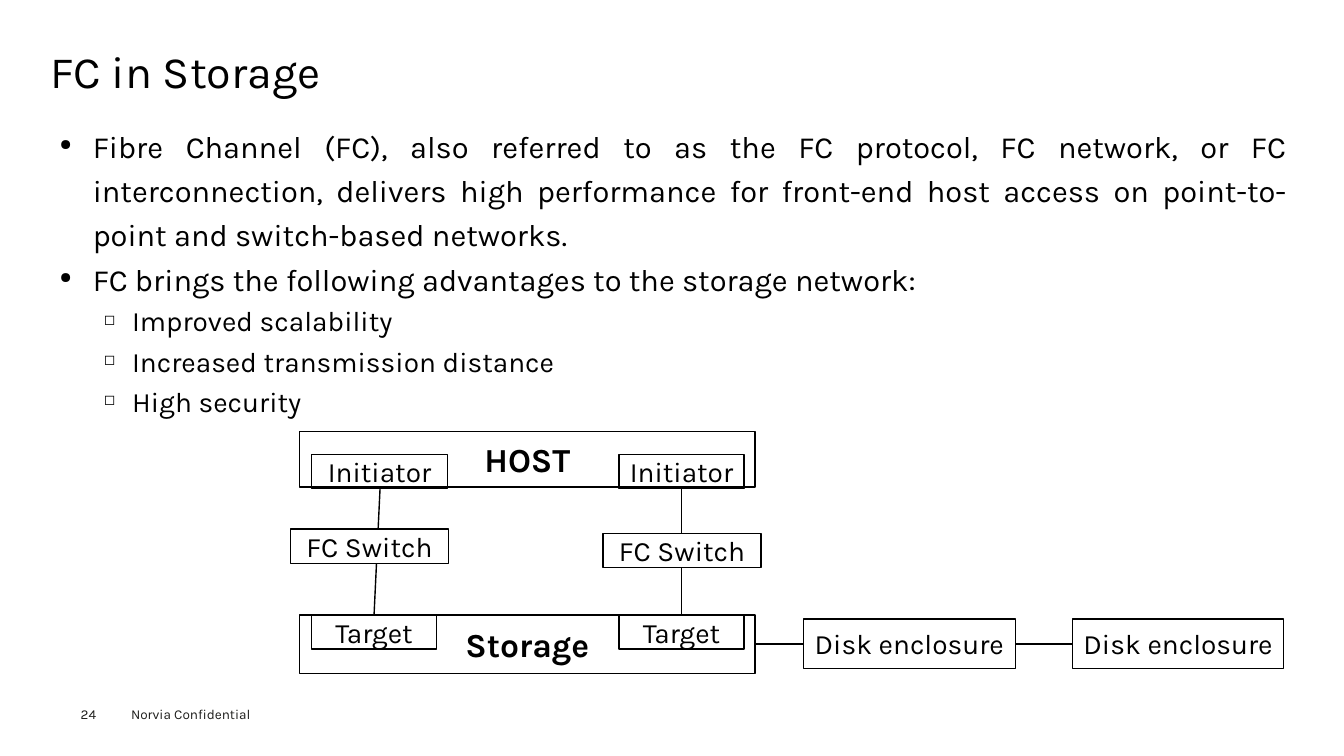
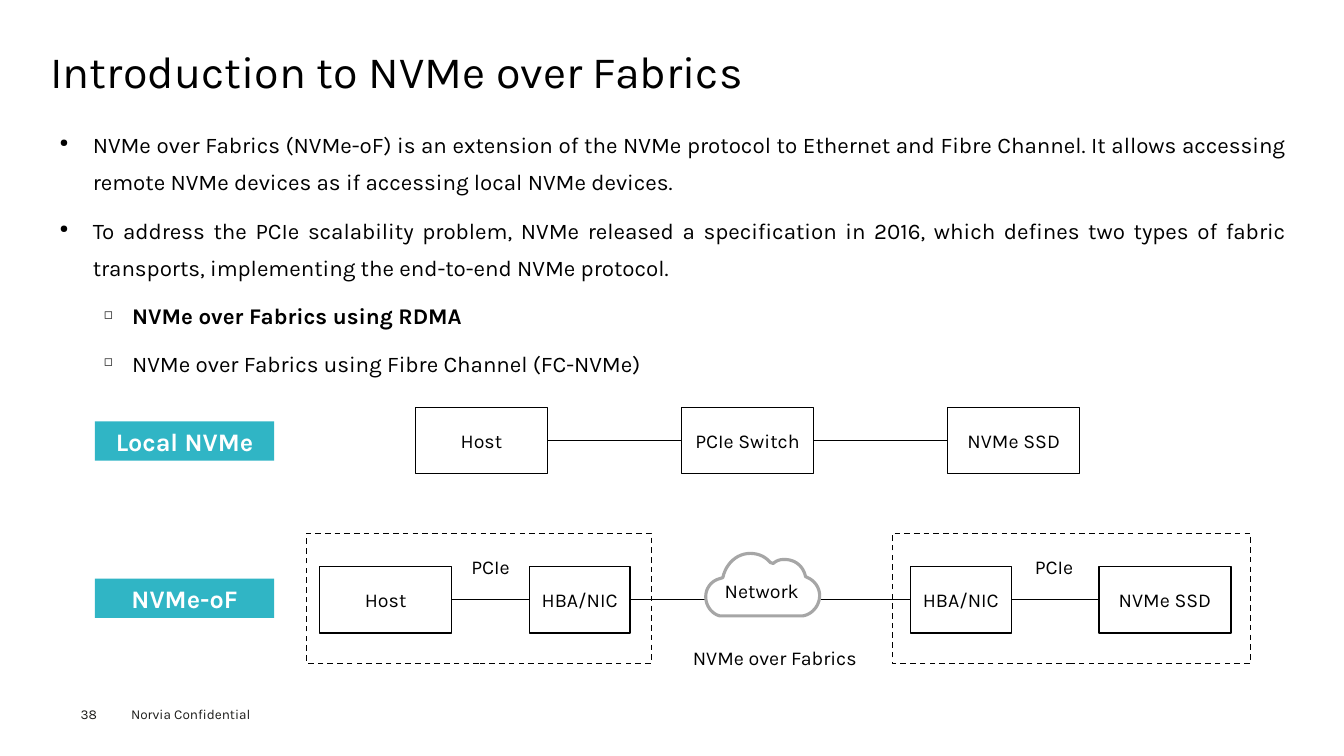
from lxml.etree import SubElement
from pptx import Presentation
from pptx.dml.color import RGBColor
from pptx.enum.dml import MSO_LINE
from pptx.enum.shapes import MSO_CONNECTOR, MSO_SHAPE
from pptx.enum.text import MSO_ANCHOR as ANCHOR, PP_ALIGN as ALIGN
from pptx.oxml.ns import qn
from pptx.util import Inches, Pt

THEME = {
    "font": "Karla",
    "black": RGBColor(0x00, 0x00, 0x00),
    "white": RGBColor(0xFF, 0xFF, 0xFF),
    "teal": RGBColor(0x30, 0xB5, 0xC5),
    "gray": RGBColor(0xA6, 0xA6, 0xA6),
    "ink": RGBColor(0x1D, 0x1D, 0x1B),
    "line": Pt(1),
    "cloud_line": Pt(2.25),
    "styles": {
        "title": {"size": 32, "align": ALIGN.LEFT, "anchor": ANCHOR.TOP, "spacing": 0.9},
        "footer": {"size": 9.7, "align": ALIGN.LEFT, "anchor": ANCHOR.TOP, "color": "ink"},
        "label": {"size": 14},
        "node": {"size": 14, "fill": "white", "line": "black"},
        "zone": {"size": 14, "line": "black", "dash": MSO_LINE.DASH},
        "tag": {"size": 18, "bold": True, "color": "white", "fill": "teal"},
        "device": {"size": 24, "bold": True, "line": "black"},
        "port": {"size": 20, "line": "black"},
        "switch": {"size": 20, "fill": "white", "line": "black"},
    },
    "levels": [
        {"align": ALIGN.JUSTIFY, "bullet": "●", "indent": (0.33, -0.33)},
        {"align": ALIGN.LEFT, "bullet": "◻", "indent": (0.72, -0.28)},
    ],
}


def write(paragraph, text, style):
    paragraph.alignment = style.get("align", ALIGN.CENTER)
    paragraph.line_spacing = style.get("spacing", 1.0)
    run = paragraph.add_run()
    run.text = text
    font_format = {
        "name": THEME["font"],
        "size": Pt(style["size"]),
        "bold": style.get("bold", False),
    }
    for name, value in font_format.items():
        setattr(run.font, name, value)
    run.font.color.rgb = THEME[style.get("color", "black")]


def add_box(slide, style_name, text, *position):
    style = THEME["styles"][style_name]
    place = [Inches(value) for value in position]
    if "fill" in style or "line" in style:
        shape = slide.shapes.add_shape(MSO_SHAPE.RECTANGLE, *place)
        shape.shadow.inherit = False
        if "fill" in style:
            shape.fill.solid()
            shape.fill.fore_color.rgb = THEME[style["fill"]]
        else:
            shape.fill.background()
        if "line" in style:
            shape.line.color.rgb = THEME[style["line"]]
            shape.line.width = THEME["line"]
            shape.line.dash_style = style.get("dash")
        else:
            shape.line.fill.background()
    else:
        shape = slide.shapes.add_textbox(*place)
    frame_format = {
        "word_wrap": True,
        "vertical_anchor": style.get("anchor", ANCHOR.MIDDLE),
        "margin_left": 0,
        "margin_right": 0,
        "margin_top": 0,
        "margin_bottom": 0,
    }
    for name, value in frame_format.items():
        setattr(shape.text_frame, name, value)
    if text:
        write(shape.text_frame.paragraphs[0], text, style)


node_width, node_height = 1.31, 0.66
local_top, fabric_top = 4.04, 5.62
local_nodes = [
    ("node", text, 4.12 + 2.64 * index, local_top, node_width, node_height)
    for index, text in enumerate(["Host", "PCIe Switch", "NVMe SSD"])
]
fabric_nodes = [
    ("node", text, left, fabric_top, width, node_height)
    for text, left, width in [
        ("Host", 3.17, node_width),
        ("HBA/NIC", 5.25, 1),
        ("HBA/NIC", 9.03, 1),
        ("NVMe SSD", 10.9, node_width),
    ]
]

PAGES = [
    {
        "number": "24",
        "title": "FC in Storage",
        "body_height": 3.06,
        "sizes": (22, 20),
        "spacing": 1.2,
        "space_before": (0, 0),
        "body": [
            (0, False, "Fibre Channel (FC), also referred to as the FC protocol, FC network, or FC "
                       "interconnection, delivers high performance for front-end host access on "
                       "point-to-point and switch-based networks."),
            (0, False, "FC brings the following advantages to the storage network:"),
            (1, False, "Improved scalability"),
            (1, False, "Increased transmission distance"),
            (1, False, "High security"),
        ],
        "lines": [
            (3.71, 6.1, 3.77, 4.84),
            (6.76, 6.1, 6.76, 4.84),
            (7.49, 6.39, 7.97, 6.39),
            (10.07, 6.39, 10.64, 6.39),
        ],
        "boxes": [
            ("device", "HOST", 2.97, 4.28, 4.52, 0.55),
            ("device", "Storage", 2.97, 6.1, 4.52, 0.58),
            ("port", "Initiator", 3.09, 4.51, 1.35, 0.34),
            ("port", "Initiator", 6.14, 4.51, 1.24, 0.34),
            ("port", "Target", 3.09, 6.1, 1.24, 0.34),
            ("port", "Target", 6.14, 6.1, 1.24, 0.34),
            ("port", "Disk enclosure", 7.97, 6.14, 2.1, 0.49),
            ("port", "Disk enclosure", 10.64, 6.14, 2.09, 0.49),
            ("switch", "FC Switch", 2.88, 5.25, 1.57, 0.34),
            ("switch", "FC Switch", 5.98, 5.29, 1.57, 0.34),
        ],
    },
    {
        "number": "38",
        "title": "Introduction to NVMe over Fabrics",
        "body_height": 2.66,
        "sizes": (16, 16),
        "spacing": 1.4,
        "space_before": (7.9, 7.2),
        "body": [
            (0, False, "NVMe over Fabrics (NVMe-oF) is an extension of the NVMe protocol to Ethernet and "
                       "Fibre Channel. It allows accessing remote NVMe devices as if accessing local "
                       "NVMe devices."),
            (0, False, "To address the PCIe scalability problem, NVMe released a specification in 2016, "
                       "which defines two types of fabric transports, implementing the end-to-end NVMe "
                       "protocol."),
            (1, True, "NVMe over Fabrics using RDMA"),
            (1, False, "NVMe over Fabrics using Fibre Channel (FC-NVMe)"),
        ],
        "lines": [(5.43, 4.37, 9.4, 4.37), (4.48, 5.95, 10.9, 5.95)],
        "boxes": local_nodes + fabric_nodes + [
            ("zone", "", 3.04, 5.29, 3.42, 1.29),
            ("zone", "", 8.85, 5.29, 3.55, 1.29),
            ("label", "PCIe", 4.57, 5.45, 0.59, 0.34),
            ("label", "PCIe", 10.16, 5.45, 0.59, 0.34),
            ("label", "NVMe over Fabrics", 6.74, 6.35, 1.89, 0.34),
            ("tag", "Local NVMe", 0.94, 4.18, 1.78, 0.39),
            ("tag", "NVMe-oF", 0.94, 5.74, 1.78, 0.39),
        ],
    },
]

presentation = Presentation()
presentation.slide_width = Inches(13.33)
presentation.slide_height = Inches(7.5)

for page in PAGES:
    slide = presentation.slides.add_slide(presentation.slide_layouts[6])
    add_box(slide, "footer", "Norvia Confidential", 1.3, 7, 1.5, 0.16)
    add_box(slide, "footer", page["number"], 0.8, 7, 0.45, 0.16)
    add_box(slide, "title", page["title"], 0.5, 0.49, 12.35, 0.54)

    body = slide.shapes.add_textbox(Inches(0.5), Inches(1.15), Inches(12.35), Inches(page["body_height"]))
    frame = body.text_frame
    frame.word_wrap = True
    frame.margin_left = frame.margin_right = Inches(0.09)
    frame.margin_top = frame.margin_bottom = Inches(0.04)
    for index, (level, bold, text) in enumerate(page["body"]):
        paragraph = frame.add_paragraph() if index else frame.paragraphs[0]
        style = THEME["levels"][level]
        left, first = style["indent"]
        properties = paragraph._p.get_or_add_pPr()
        properties.set("marL", str(Inches(left)))
        properties.set("indent", str(Inches(first)))
        SubElement(properties, qn("a:buSzPct"), val="50000")
        SubElement(properties, qn("a:buChar"), char=style["bullet"])
        paragraph.level = level
        if index:
            paragraph.space_before = Pt(page["space_before"][level])
        write(paragraph, text, {
            "size": page["sizes"][level],
            "bold": bold,
            "align": style["align"],
            "spacing": page["spacing"],
        })

    for ends in page["lines"]:
        connector = slide.shapes.add_connector(MSO_CONNECTOR.STRAIGHT, *[Inches(end) for end in ends])
        connector.line.color.rgb = THEME["black"]
        connector.line.width = THEME["line"]
        SubElement(connector._element.spPr, qn("a:effectLst"))

    for box in page["boxes"]:
        add_box(slide, *box)

cloud_curves = [
    ((7.44, 5.49), (7.52, 5.49), (7.59, 5.52), (7.64, 5.58)),
    ((7.67, 5.59), (7.7, 5.56), (7.74, 5.55), (7.78, 5.55)),
    ((7.78, 5.55), (7.89, 5.55), (7.97, 5.62), (7.99, 5.72)),
    ((8.01, 5.73), (8.08, 5.76), (8.13, 5.83), (8.13, 5.91)),
    ((8.13, 5.91), (8.13, 6.01), (8.05, 6.1), (7.96, 6.11)),
    ((7.14, 6.11), (7.06, 6.09), (7, 6.01), (7, 5.92)),
    ((7, 5.92), (7, 5.83), (7.06, 5.76), (7.14, 5.74)),
    ((7.17, 5.73), (7.2, 5.59), (7.31, 5.49), (7.44, 5.49)),
]
steps = 12
cloud_points = []
for curve in cloud_curves:
    for step in range(steps + 1):
        t = step / steps
        weights = ((1 - t) ** 3, 3 * t * (1 - t) ** 2, 3 * t ** 2 * (1 - t), t ** 3)
        cloud_points.append(tuple(
            Inches(sum(weight * point[axis] for weight, point in zip(weights, curve)))
            for axis in (0, 1)
        ))
builder = slide.shapes.build_freeform(*cloud_points[0])
builder.add_line_segments(cloud_points[1:], close=True)
cloud = builder.convert_to_shape()
cloud.shadow.inherit = False
cloud.fill.solid()
cloud.fill.fore_color.rgb = THEME["white"]
cloud.line.color.rgb = THEME["gray"]
cloud.line.width = THEME["cloud_line"]
add_box(slide, "label", "Network", 7.07, 5.69, 0.97, 0.34)

presentation.save("out.pptx")
